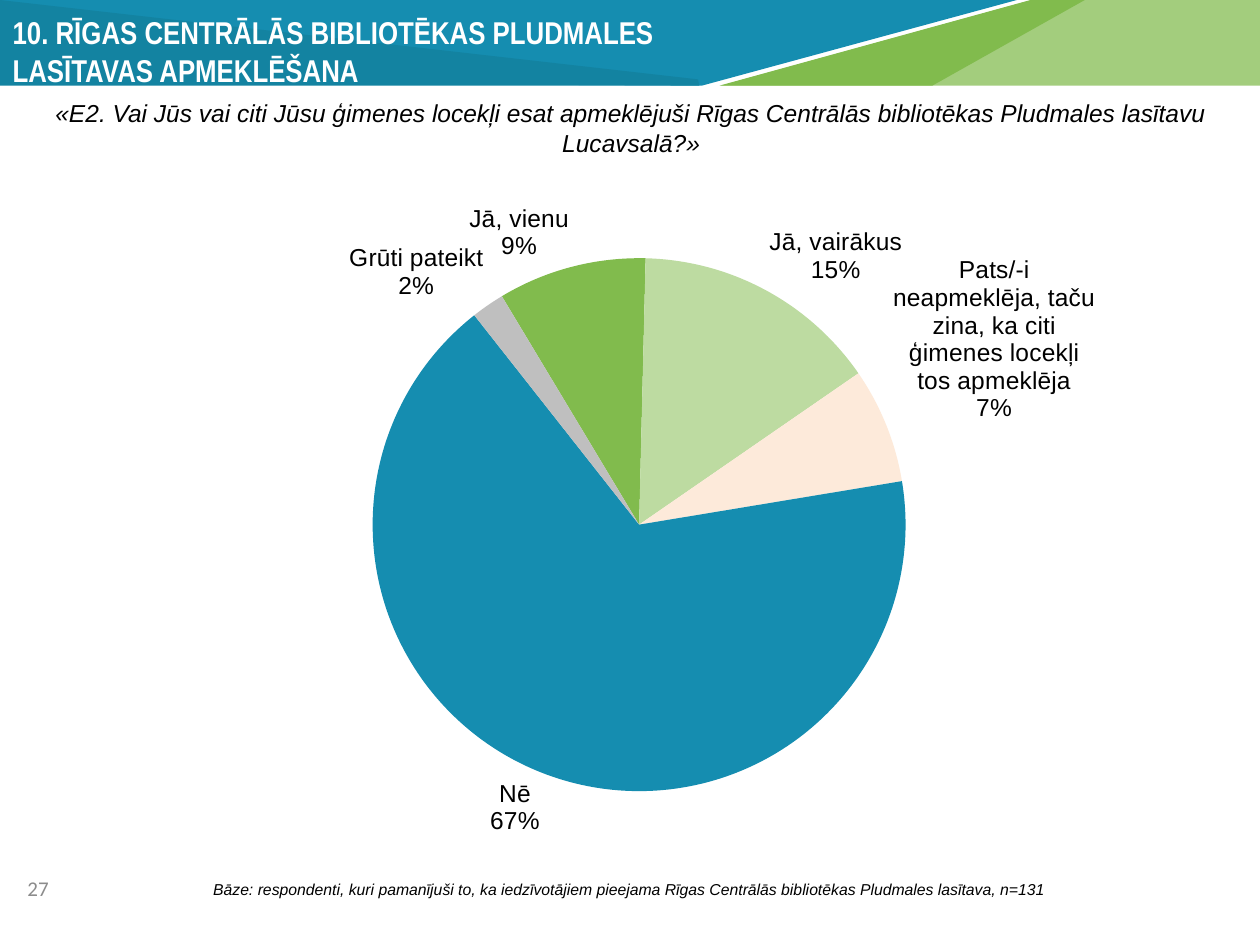
import pptx
import pptx.chart.data
import pptx.dml.color
import pptx.enum.chart
import pptx.enum.text
import pptx.oxml
import pptx.oxml.ns
import pptx.util

PX = 9144
THEME = {
    "blue": "158DB0", "dark_blue": "1383A1", "green": "81BB4D",
    "light_green": "A3CD7D", "pale_green": "BDDBA1", "cream": "FDEADA",
    "silver": "BFBFBF", "grey": "8C8C8C", "black": "000000", "white": "FFFFFF",
    "title_size": 18, "body_size": 14, "number_size": 12, "note_size": 9,
    "title_font": "Arial Narrow", "body_font": "Arial", "number_font": "Calibri",
}


def color(name):
    return pptx.dml.color.RGBColor.from_string(THEME[name])


def write(box, text, style, tint, align, anchor, bold=False, italic=False):
    frame = box.text_frame
    frame.text = text
    frame.word_wrap = True
    frame.auto_size = pptx.enum.text.MSO_AUTO_SIZE.NONE
    frame.vertical_anchor = anchor
    para = frame.paragraphs[0]
    para.alignment = align
    for span in para.runs:
        span.font.name = THEME["body_font" if style == "note" else f"{style}_font"]
        span.font.size = pptx.util.Pt(THEME[f"{style}_size"])
        span.font.bold = bold
        span.font.italic = italic
        span.font.color.rgb = color(tint)


deck = pptx.Presentation()
deck.slide_width = 1000 * PX
deck.slide_height = 750 * PX
page = deck.slides.add_slide(deck.slide_layouts[5])

bands = [
    ("blue", [(0, 0), (807, 0), (557, 68), (0, 65)]),
    ("dark_blue", [(0, 0), (554, 63), (555, 68), (0, 68)]),
    ("light_green", [(572, 68), (819, 0), (1001, 0), (1001, 68)]),
    ("green", [(571, 68), (818, 0), (861, 0), (740, 68)]),
]
for tint, corners in bands:
    builder = page.shapes.build_freeform(*corners[0], scale=PX)
    builder.add_line_segments(corners[1:], close=True)
    band = builder.convert_to_shape()
    band.shadow.inherit = False
    band.fill.solid()
    band.fill.fore_color.rgb = color(tint)
    band.line.fill.background()

ALIGN = pptx.enum.text.PP_ALIGN
ANCHOR = pptx.enum.text.MSO_ANCHOR

title = page.shapes.title
title.left, title.top, title.width, title.height = 0, 3 * PX, 862 * PX, 75 * PX
write(title, "10. RĪGAS CENTRĀLĀS BIBLIOTĒKAS PLUDMALES \vLASĪTAVAS APMEKLĒŠANA",
      "title", "white", ALIGN.LEFT, ANCHOR.MIDDLE, bold=True)
page.shapes.element.append(title.element)

question = page.shapes.add_textbox(1 * PX, 78 * PX, 1000 * PX, 47 * PX)
write(question, "«E2. Vai Jūs vai citi Jūsu ģimenes locekļi esat apmeklējuši Rīgas Centrālās "
      "bibliotēkas Pludmales lasītavu Lucavsalā?»",
      "body", "black", ALIGN.CENTER, ANCHOR.MIDDLE, italic=True)

base_note = page.shapes.add_textbox(-2 * PX, 690 * PX, 1002 * PX, 31 * PX)
write(base_note, "Bāze: respondenti, kuri pamanījuši to, ka iedzīvotājiem pieejama Rīgas "
      "Centrālās bibliotēkas Pludmales lasītava, n=131",
      "note", "black", ALIGN.CENTER, ANCHOR.MIDDLE, italic=True)

page_number = page.shapes.add_textbox(12 * PX, 690 * PX, 106 * PX, 40 * PX)
write(page_number, "27", "number", "grey", ALIGN.LEFT, ANCHOR.TOP)

answers = [
    ("Jā, vienu", 9, "green"),
    ("Jā, vairākus", 15, "pale_green"),
    ("Pats/-i neapmeklēja, taču zina, ka citi ģimenes locekļi tos apmeklēja", 7, "cream"),
    ("Nē", 67, "blue"),
    ("Grūti pateikt", 2, "silver"),
]
data = pptx.chart.data.CategoryChartData(number_format="0")
data.categories = [answer for answer, share, tint in answers]
data.add_series("Series 1", [share for answer, share, tint in answers])
chart = page.shapes.add_chart(
    pptx.enum.chart.XL_CHART_TYPE.PIE,
    106 * PX, 126 * PX, 819 * PX, 564 * PX, data).chart
chart.has_title = False
chart.has_legend = False
chart.font.name = THEME["body_font"]
chart.font.size = pptx.util.Pt(THEME["body_size"])
chart.font.color.rgb = color("black")

pie = chart.plots[0]
pie.vary_by_categories = True
for index, (answer, share, tint) in enumerate(answers):
    slice_format = pie.series[0].points[index].format
    slice_format.fill.solid()
    slice_format.fill.fore_color.rgb = color(tint)
    slice_format.line.fill.background()

pie.has_data_labels = True
labels = pie.data_labels
labels.show_category_name = True
labels.show_percentage = True
labels.show_value = False
labels.number_format = "0%"
labels.number_format_is_linked = False
labels.position = pptx.enum.chart.XL_LABEL_POSITION.OUTSIDE_END
labels.font.name = THEME["body_font"]
labels.font.size = pptx.util.Pt(THEME["body_size"])
labels.font.color.rgb = color("black")

namespace = pptx.oxml.ns.nsdecls("c")
qualified = pptx.oxml.ns.qn
plot_area = chart.element.find(".//" + qualified("c:plotArea"))
pie_element = plot_area.find(qualified("c:pieChart"))
separator = pptx.oxml.parse_xml(f"<c:separator {namespace}>\n</c:separator>")
pie_element.find(".//" + qualified("c:showBubbleSize")).addnext(separator) if (
    pie_element.find(".//" + qualified("c:showBubbleSize")) is not None
) else pie_element.find(".//" + qualified("c:showPercent")).addnext(separator)
for old_angle in pie_element.findall(qualified("c:firstSliceAng")):
    pie_element.remove(old_angle)
pie_element.append(pptx.oxml.parse_xml(f'<c:firstSliceAng {namespace} val="329"/>'))

for old_layout in plot_area.findall(qualified("c:layout")):
    plot_area.remove(old_layout)
plot_area.insert(0, pptx.oxml.parse_xml(
    f'<c:layout {namespace}><c:manualLayout><c:layoutTarget val="inner"/>'
    '<c:xMode val="edge"/><c:yMode val="edge"/><c:x val="0.21"/><c:y val="0.14"/>'
    '<c:w val="0.56"/><c:h val="0.75"/></c:manualLayout></c:layout>'))

deck.save("out.pptx")
